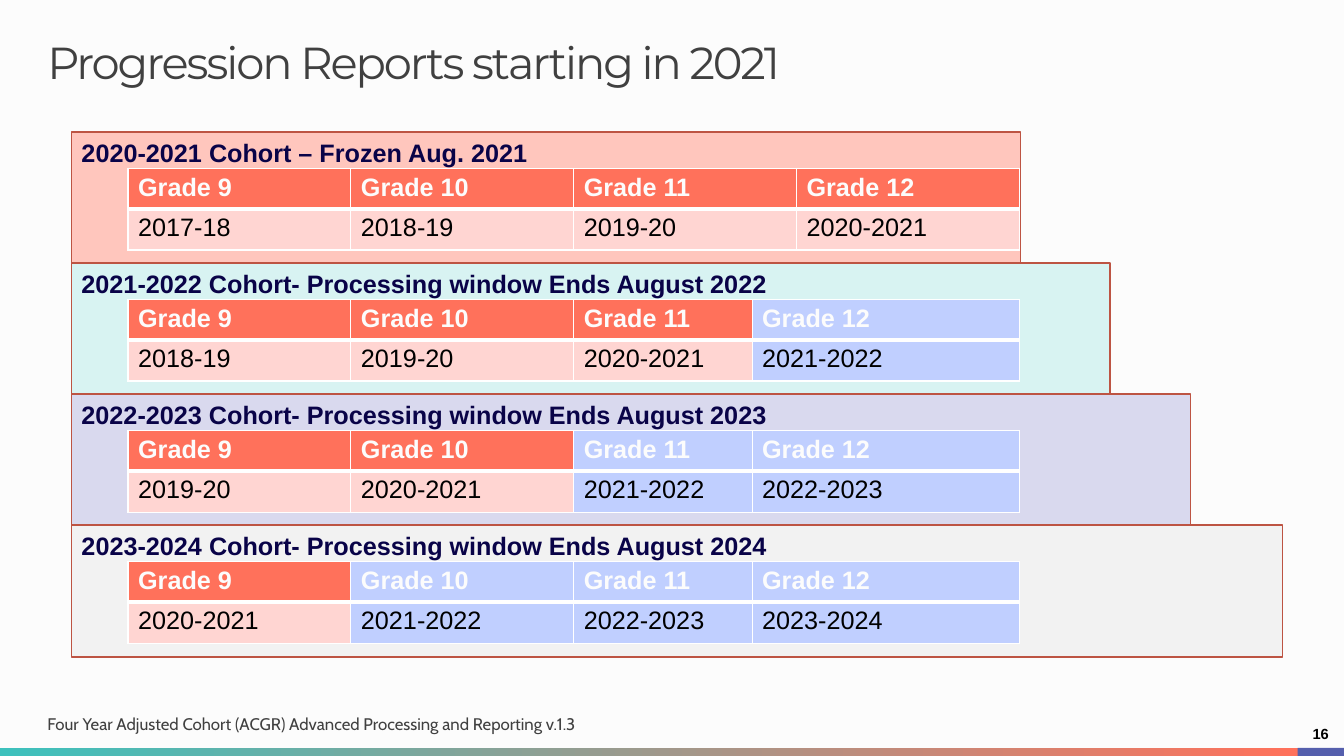
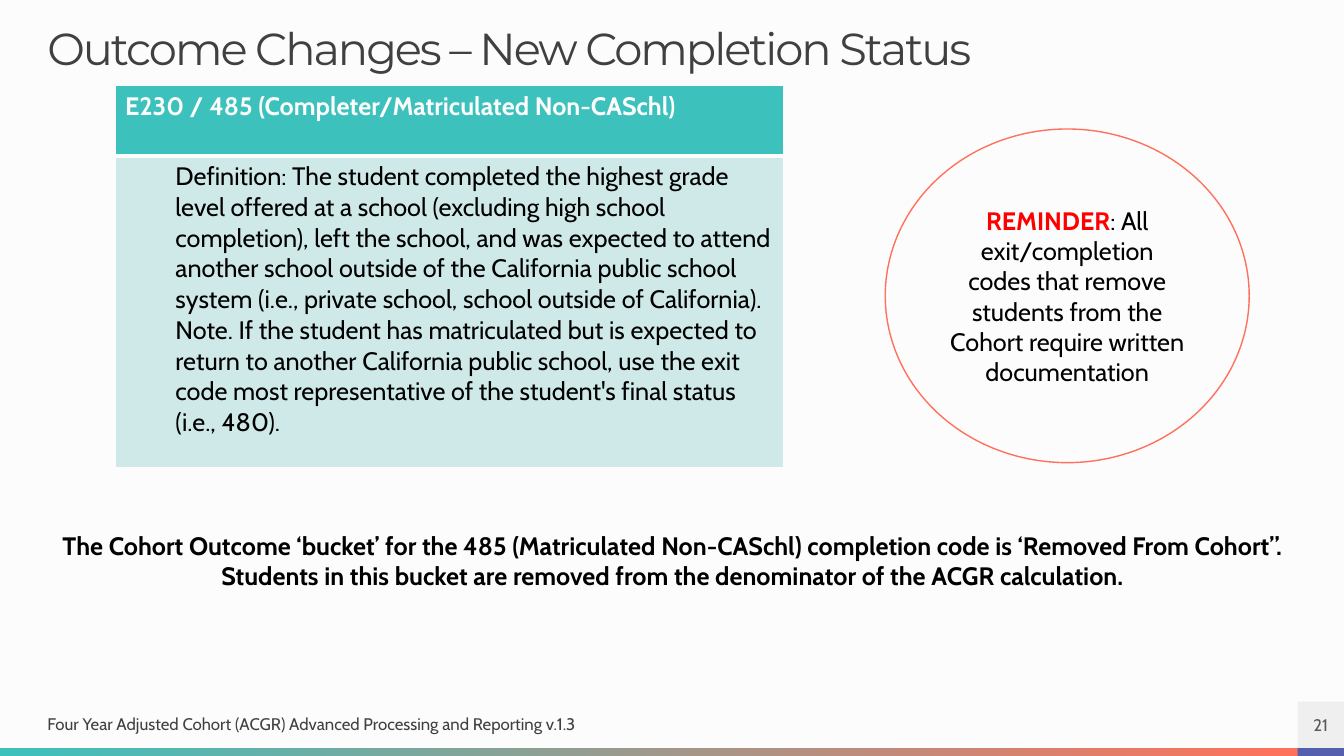
from lxml.etree import SubElement
from pptx import Presentation
from pptx.dml.color import RGBColor
from pptx.enum.shapes import MSO_SHAPE
from pptx.enum.text import MSO_ANCHOR, PP_ALIGN
from pptx.oxml.ns import qn
from pptx.util import Inches, Pt

BODY, FOOTER, TITLE, PLAIN = "Cabin", "Cabin", "Montserrat", "Arial"
BLACK, PAPER, WHITE, GREY, NAVY = "000000", "FCFCFC", "FFFFFF", "404040", "090348"
TEAL, PALE_TEAL, CORAL, PALE_CORAL = "3DC1BD", "CEE9E8", "FF715B", "FFD5D2"
RUST, INDIGO, PERIWINKLE = "BD5443", "555FAD", "C0CFFF"

BAND_TOP, BAND_HEIGHT = 7.42, 0.08
NUMBER_LEFT, NUMBER_SIZE = 12.87, 0.46
FOOTER_TEXT = "Four Year Adjusted Cohort (ACGR) Advanced Processing and Reporting v.1.3"

COHORT_LEFT, COHORT_TOP, COHORT_STEP, COHORT_HEIGHT = 0.71, 1.31, 1.3, 1.31
FIRST_COHORT_START = 2017
FIRST_OPEN_YEAR = 2021
EVEN_COLUMNS = [2.21] * 4
OPEN_COLUMNS = [2.21, 2.21, 1.77, 2.65]
COHORTS = [
    ("2020-2021 Cohort – Frozen Aug. 2021", 9.41, "FFC6BD", EVEN_COLUMNS),
    ("2021-2022 Cohort- Processing window Ends August 2022", 10.3, "D8F3F2", OPEN_COLUMNS),
    ("2022-2023 Cohort- Processing window Ends August 2023", 11.1, "D9D9EE", OPEN_COLUMNS),
    ("2023-2024 Cohort- Processing window Ends August 2024", 12.01, "F2F2F2", OPEN_COLUMNS),
]


def rgb(value):
    return RGBColor.from_string(value)


def style(font, color, **formats):
    font.color.rgb = rgb(color)
    for attribute, value in formats.items():
        setattr(font, attribute, value)


def letter(name, size, color, bold=False):
    """Bundle the font settings of a run."""
    return {"name": name, "size": Pt(size), "color": color, "bold": bold}


def write(frame, paragraphs, align=PP_ALIGN.LEFT, anchor=MSO_ANCHOR.TOP, inset=None):
    """Fill a frame; each paragraph is a list of (text, letter) runs."""
    frame.word_wrap = True
    frame.vertical_anchor = anchor
    if inset is not None:
        for side in ("left", "top", "right", "bottom"):
            setattr(frame, f"margin_{side}", Inches(inset))
    for index, runs in enumerate(paragraphs):
        paragraph = frame.paragraphs[0] if index == 0 else frame.add_paragraph()
        paragraph.alignment = align
        for text, formats in runs:
            run = paragraph.add_run()
            run.text = text
            style(run.font, **formats)


def add_text(slide, box, paragraphs, **layout):
    frame = slide.shapes.add_textbox(*map(Inches, box)).text_frame
    write(frame, paragraphs, **layout)
    return frame


def add_panel(slide, box, fill, line=None, preset=MSO_SHAPE.RECTANGLE):
    panel = slide.shapes.add_shape(preset, *map(Inches, box))
    panel.shadow.inherit = False
    panel.fill.solid()
    panel.fill.fore_color.rgb = rgb(fill)
    if line:
        panel.line.color.rgb = rgb(line)
        panel.line.width = Pt(1)
    else:
        panel.line.fill.background()
    return panel


def add_title(slide, text, top):
    frame = add_text(slide, (0.47, top, 11.36, 0.58),
                     [[(text, letter(TITLE, 32, GREY))]], inset=0)
    title = frame.paragraphs[0]
    title.line_spacing = 0.9
    title.runs[0]._r.get_or_add_rPr().set("spc", "-150")


def add_footer(slide):
    band = add_panel(slide, (0, BAND_TOP, NUMBER_LEFT, BAND_HEIGHT), TEAL)
    band.fill.gradient()
    band.fill.gradient_angle = 0
    for stop, color, position in zip(band.fill.gradient_stops, (TEAL, CORAL), (0, 1)):
        stop.color.rgb = rgb(color)
        stop.position = position
    add_panel(slide, (NUMBER_LEFT, BAND_TOP, NUMBER_SIZE, BAND_HEIGHT), INDIGO)
    add_text(slide, (0.47, 6.96, 5.98, 0.45),
             [[(FOOTER_TEXT, letter(FOOTER, 12, GREY))]],
             anchor=MSO_ANCHOR.MIDDLE, inset=0)


def add_slide(deck, title, title_top):
    slide = deck.slides.add_slide(deck.slide_layouts[6])
    add_footer(slide)
    add_title(slide, title, title_top)
    return slide


def add_grid(slide, left, top, columns, rows):
    grid = slide.shapes.add_table(len(rows), len(columns), Inches(left), Inches(top),
                                  Inches(sum(columns)), Inches(sum(rows))).table
    grid.horz_banding = False
    for column, width in zip(grid.columns, columns):
        column.width = Inches(width)
    for row, height in zip(grid.rows, rows):
        row.height = Inches(height)
    return grid


def fill_cell(cell, paragraphs, fill, border, top=1, bottom=1):
    """Write a cell, then set its border widths in points and its fill."""
    write(cell.text_frame, paragraphs)
    properties = cell._tc.get_or_add_tcPr()
    for edge, width in (("L", 1), ("R", 1), ("T", top), ("B", bottom)):
        line = SubElement(properties, qn(f"a:ln{edge}"), w=str(Pt(width)))
        solid = SubElement(line, qn("a:solidFill"))
        SubElement(solid, qn("a:srgbClr"), val=border)
    cell.fill.solid()
    cell.fill.fore_color.rgb = rgb(fill)


def school_year(start):
    """Years before 2020 carry a two-digit end."""
    return f"{start}-{start + 1 if start >= 2020 else (start + 1) % 100}"


def add_cohort(slide, index, heading, width, fill, columns):
    top = COHORT_TOP + index * COHORT_STEP
    panel = add_panel(slide, (COHORT_LEFT, top, width, COHORT_HEIGHT), fill, RUST)
    write(panel.text_frame, [[(heading, letter(PLAIN, 18, NAVY, True))]])
    grades = add_grid(slide, 1.27, top + 0.36, columns, [0.39, 0.41])
    for column in range(len(columns)):
        start = FIRST_COHORT_START + index + column
        still_open = start >= FIRST_OPEN_YEAR
        fill_cell(grades.cell(0, column),
                  [[(f"Grade {9 + column}", letter(PLAIN, 18, PAPER, True))]],
                  PERIWINKLE if still_open else CORAL, WHITE, bottom=3)
        fill_cell(grades.cell(1, column),
                  [[(school_year(start), letter(PLAIN, 18, BLACK))]],
                  PERIWINKLE if still_open else PALE_CORAL, WHITE, top=3)


def build_progression(deck):
    slide = add_slide(deck, "Progression Reports starting in 2021", 0.4)
    add_text(slide, (NUMBER_LEFT, 6.96, NUMBER_SIZE, NUMBER_SIZE),
             [[("16", letter(PLAIN, 10.5, BLACK, True))]],
             align=PP_ALIGN.CENTER, anchor=MSO_ANCHOR.BOTTOM)
    for index, cohort in enumerate(COHORTS):
        add_cohort(slide, index, *cohort)


def build_outcome(deck):
    slide = add_slide(deck, "Outcome Changes – New Completion Status", 0.27)
    plain, bold = letter(BODY, 18, BLACK), letter(BODY, 18, BLACK, True)

    number = add_panel(slide, (NUMBER_LEFT, 6.96, NUMBER_SIZE, NUMBER_SIZE), "EFEFEF")
    write(number.text_frame, [[("21", letter(FOOTER, 12, "595959"))]],
          align=PP_ALIGN.CENTER, anchor=MSO_ANCHOR.MIDDLE, inset=0)

    add_text(slide, (0.47, 5.21, 12.4, 1.01), [
        [("The Cohort Outcome ‘bucket’ for the 485 (Matriculated Non-CASchl) completion "
          "code is ‘Removed From Cohort”.", bold)],
        [("Students in this bucket are removed from the denominator of the ACGR "
          "calculation.", bold)],
    ], align=PP_ALIGN.CENTER)

    definition = add_grid(slide, 1.14, 0.85, [6.63], [0.7, 3.09])
    fill_cell(definition.cell(0, 0),
              [[("E230 / 485 (Completer/Matriculated Non-CASchl)",
                 letter(BODY, 18, PAPER, True))]],
              TEAL, PAPER, bottom=3)
    meaning = definition.cell(1, 0)
    fill_cell(meaning, [
        [("Definition: The student completed the highest grade level offered at a school "
          "(excluding high school completion), left the school, and was expected to attend "
          "another school outside of the California public school system (i.e., private "
          "school, school outside of California).", plain)],
        [("Note. If the student has matriculated but is expected to return to another "
          "California public school, use the exit code most representative of the "
          "student's final status (i.e., 480).", plain)],
    ], PALE_TEAL, PAPER, top=3)
    for paragraph in meaning.text_frame.paragraphs:
        paragraph._p.get_or_add_pPr().set("marL", str(Inches(0.5)))

    reminder = add_panel(slide, (8.78, 1.28, 3.61, 3.31), PAPER, CORAL, MSO_SHAPE.OVAL)
    write(reminder.text_frame, [[
        ("REMINDER", letter(BODY, 18, "FF0000", True)),
        (": All exit/completion codes that remove students from the Cohort require "
         "written documentation", plain),
    ]], align=PP_ALIGN.CENTER, anchor=MSO_ANCHOR.MIDDLE)


def main():
    deck = Presentation()
    deck.slide_width, deck.slide_height = Inches(13.33), Inches(7.5)
    backdrop = deck.slide_master.background.fill
    backdrop.solid()
    backdrop.fore_color.rgb = rgb(PAPER)
    build_progression(deck)
    build_outcome(deck)
    deck.save("out.pptx")


if __name__ == "__main__":
    main()
